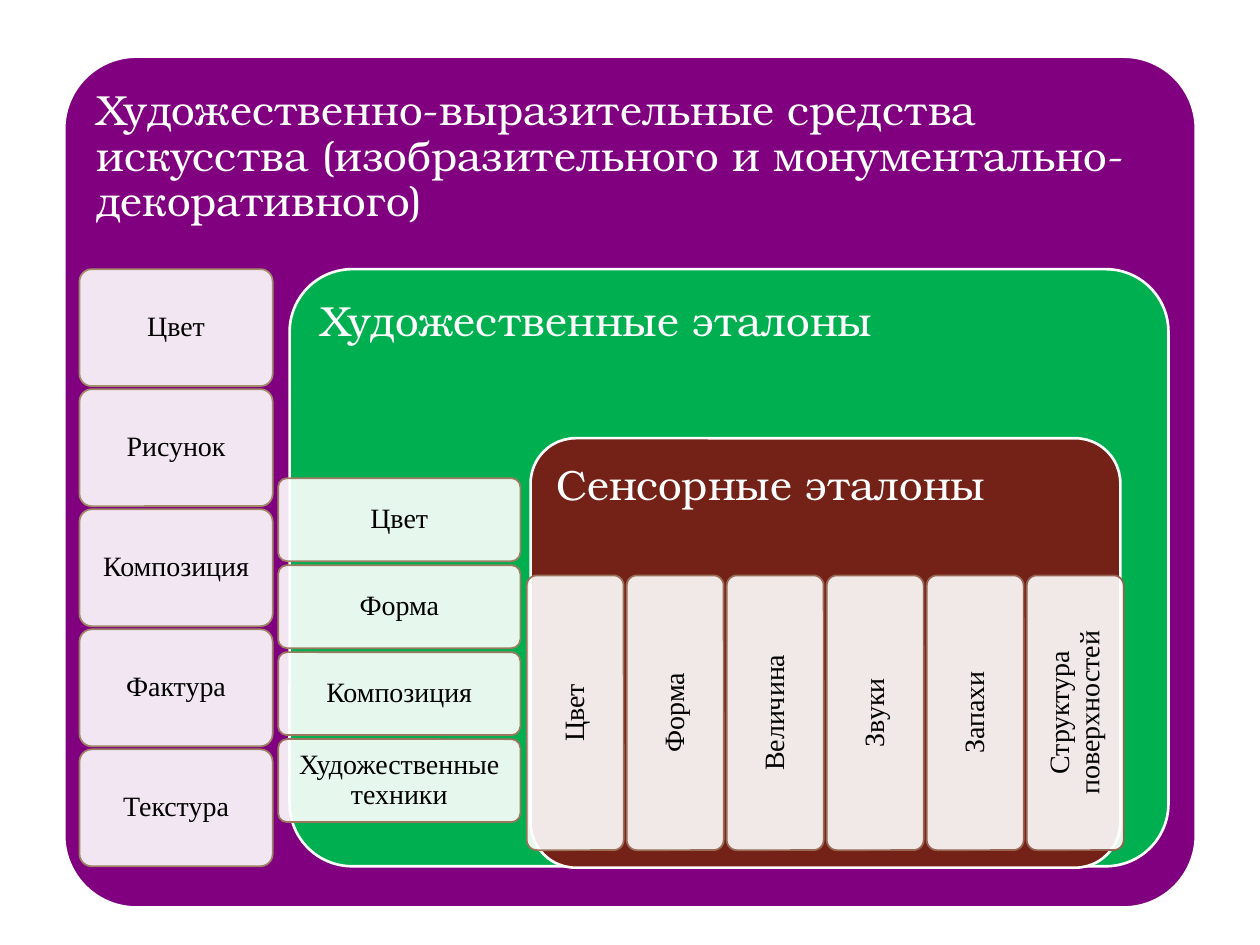
import pptx
import pptx.util
from lxml import etree
from pptx.dml.color import RGBColor
from pptx.enum.shapes import MSO_SHAPE
from pptx.enum.text import MSO_ANCHOR, MSO_AUTO_SIZE, PP_ALIGN
from pptx.oxml.ns import qn
from pptx.util import Pt

WHITE = RGBColor(0xFF, 0xFF, 0xFF)
BLACK = RGBColor(0x00, 0x00, 0x00)
PURPLE = RGBColor(0x80, 0x00, 0x80)
GREEN = RGBColor(0x00, 0xB0, 0x50)
BROWN = RGBColor(0x74, 0x22, 0x17)
FIRST_BORDER = RGBColor(0xA2, 0x8E, 0x6A)
LAST_BORDER = RGBColor(0x95, 0x62, 0x51)

MEANS = ["Цвет", "Рисунок", "Композиция", "Фактура", "Текстура"]
ART_STANDARDS = ["Цвет", "Форма", "Композиция", "Художественные техники"]
SENSORY_STANDARDS = ["Цвет", "Форма", "Величина", "Звуки", "Запахи",
                     "Структура поверхностей"]
CARD_COUNT = len(MEANS + ART_STANDARDS + SENSORY_STANDARDS)


class NestedDiagram:
    heading_font = "TeX Gyre Bonum"
    card_font = "Times New Roman"

    def __init__(self, page):
        self.page = page
        self.cards_drawn = 0

    def label(self, shape, text, font, size, color, align, anchor, inset):
        frame = shape.text_frame
        frame.text = text
        frame.word_wrap = True
        frame.auto_size = MSO_AUTO_SIZE.NONE
        frame.vertical_anchor = anchor
        frame.margin_left = frame.margin_right = Pt(inset)
        frame.margin_top = frame.margin_bottom = Pt(inset)
        para = frame.paragraphs[0]
        para.alignment = align
        para.line_spacing = 0.9
        para.space_before = Pt(0)
        for span in para.runs:
            span.font.name = font
            span.font.size = Pt(size)
            span.font.color.rgb = color

    def heading(self, shape, text):
        self.label(shape, text, self.heading_font, 24, WHITE,
                   PP_ALIGN.LEFT, MSO_ANCHOR.TOP, 7.2)

    def box(self, left, top, width, height, rounding, fill, border, weight):
        shape = self.page.shapes.add_shape(
            MSO_SHAPE.ROUNDED_RECTANGLE,
            Pt(left), Pt(top), Pt(width), Pt(height))
        shape.adjustments[0] = rounding
        shape.shadow.inherit = False
        shape.fill.solid()
        shape.fill.fore_color.rgb = fill
        shape.line.color.rgb = border
        shape.line.width = Pt(weight)
        return shape

    def panel(self, left, top, width, height, fill, text="", rounding=0.105):
        shape = self.box(left, top, width, height, rounding, fill, WHITE, 1.5)
        if text:
            self.heading(shape, text)

    def title(self, left, top, width, height, text):
        title = self.page.shapes.title
        title.left, title.top = Pt(left), Pt(top)
        title.width, title.height = Pt(width), Pt(height)
        title.element.getparent().append(title.element)
        self.heading(title, text)

    def border_color(self):
        share = self.cards_drawn / (CARD_COUNT - 1)
        return RGBColor(*(round(first + (last - first) * share)
                          for first, last in zip(FIRST_BORDER, LAST_BORDER)))

    def card(self, left, top, width, height, text, upright):
        shape = self.box(left, top, width, height, 0.105, WHITE,
                         self.border_color(), 1)
        color = shape.element.spPr.find(qn("a:solidFill"))[0]
        etree.SubElement(color, qn("a:alpha")).set("val", "90000")
        self.label(shape, text, self.card_font, 16, BLACK,
                   PP_ALIGN.CENTER, MSO_ANCHOR.MIDDLE, 5)
        if upright:
            shape.element.txBody.bodyPr.set("vert", "vert270")
        self.cards_drawn += 1

    def cards(self, left, top, width, height, labels, step_x=0, step_y=0):
        for index, text in enumerate(labels):
            self.card(left + index * step_x, top + index * step_y,
                      width, height, text, upright=step_x > 0)


def main():
    deck = pptx.Presentation()
    deck.slide_width, deck.slide_height = Pt(720), Pt(540)
    diagram = NestedDiagram(deck.slides.add_slide(deck.slide_layouts[5]))

    diagram.panel(36.7, 32.4, 646.6, 486.2, PURPLE, rounding=0.085)
    diagram.title(48, 44, 623.6, 100,
                  "Художественно-выразительные средства искусства "
                  "(изобразительного и монументально-декоративного)")
    diagram.cards(45.4, 153.8, 110.4, 66.8, MEANS, step_y=68.6)

    diagram.panel(165.5, 153.8, 502.2, 341.2, GREEN, "Художественные эталоны")
    diagram.cards(159, 273.3, 138.4, 47.4, ART_STANDARDS, step_y=49.7)

    diagram.panel(303.2, 250.4, 337, 245.4, BROWN, "Сенсорные эталоны")
    diagram.cards(301, 328.8, 55.4, 157, SENSORY_STANDARDS, step_x=57.15)

    deck.save("out.pptx")


if __name__ == "__main__":
    main()
